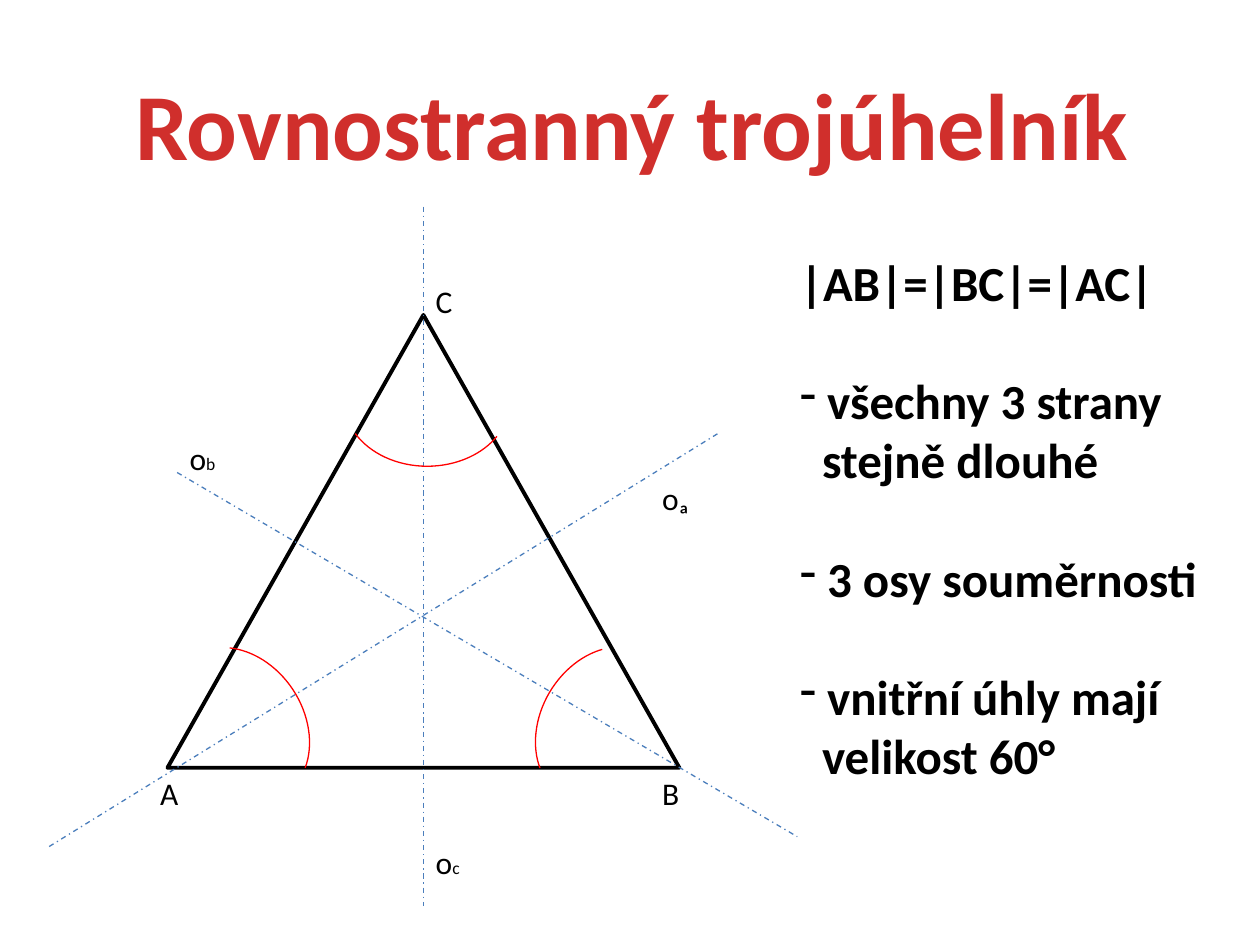
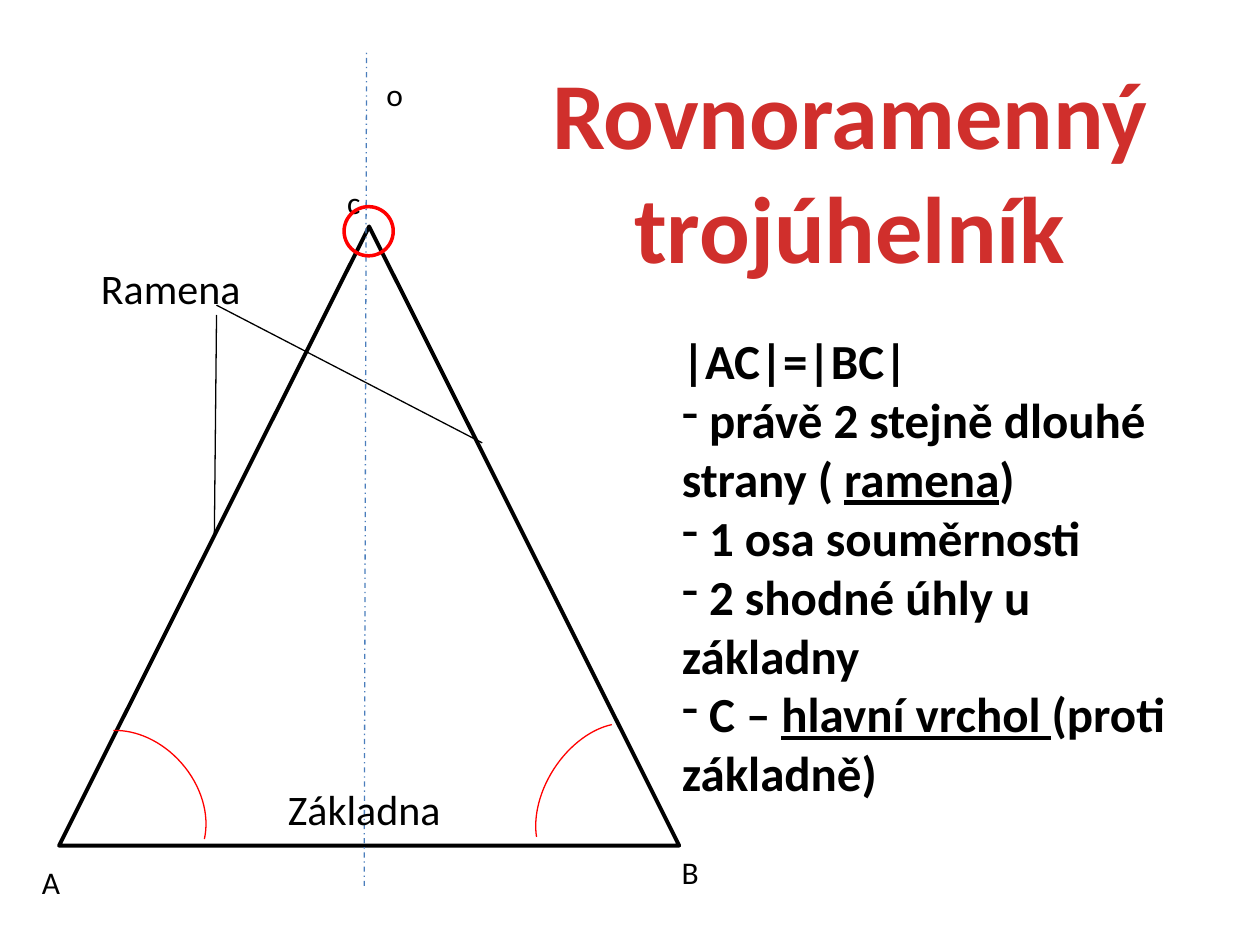
from dataclasses import dataclass

from lxml import etree
from pptx import Presentation
from pptx.dml import color
from pptx.enum import dml, shapes, text
from pptx.oxml import ns
from pptx.util import Pt


# Shared look
@dataclass(frozen=True)
class Theme:
    font: str = "Calibri"
    title_color: color.RGBColor = color.RGBColor(0xD0, 0x2F, 0x2C)
    ink: color.RGBColor = color.RGBColor(0, 0, 0)
    axis: color.RGBColor = color.RGBColor(0x4B, 0x7E, 0xBC)
    angle: color.RGBColor = color.RGBColor(0xFF, 0, 0)
    title_size: float = 54
    fact_size: float = 28
    word_size: float = 24
    label_size: float = 18
    subscript_size: float = 10
    thin: float = 0.75
    outline: float = 2.25
    ring: float = 2


THEME = Theme()
LINE_HEIGHT = 1.22
BLANK_LINE = THEME.fact_size * LINE_HEIGHT
CONTINUATION_INDENT = 12.66


# Repeated elements, lengths in points
@dataclass(frozen=True)
class Box:
    left: float
    top: float
    width: float
    height: float

    def lengths(self) -> tuple:
        return Pt(self.left), Pt(self.top), Pt(self.width), Pt(self.height)


@dataclass(frozen=True)
class Label:
    words: str
    left: float
    top: float
    width: float
    subscript: str = ""
    size: float = THEME.label_size


@dataclass(frozen=True)
class Line:
    start: tuple[float, float]
    end: tuple[float, float]


@dataclass(frozen=True)
class AngleArc:
    box: Box
    rotation: float
    start: float = 207
    end: float = 335.47


@dataclass(frozen=True)
class Fact:
    """Every second phrase is underlined."""
    phrases: tuple[str, ...]
    bullet: bool = True
    indent: float = 0
    space_before: float = 0


# Drawing functions
def set_font(font, size: float, ink: color.RGBColor, bold: bool = False) -> None:
    font.name = THEME.font
    font.size = Pt(size)
    font.bold = bold
    font.color.rgb = ink


def add_text_frame(slide, box: Box, wrap: bool):
    frame = slide.shapes.add_textbox(*box.lengths()).text_frame
    frame.word_wrap = wrap
    frame.auto_size = text.MSO_AUTO_SIZE.SHAPE_TO_FIT_TEXT
    return frame


def add_title(slide, words: str, box: Box, wrap: bool) -> None:
    paragraph = add_text_frame(slide, box, wrap).paragraphs[0]
    paragraph.text = words
    paragraph.alignment = text.PP_ALIGN.CENTER
    set_font(paragraph.font, THEME.title_size, THEME.title_color, bold=True)


def add_label(slide, label: Label) -> None:
    height = round(label.size * LINE_HEIGHT + 7.2, 2)
    box = Box(label.left, label.top, label.width, height)
    paragraph = add_text_frame(slide, box, wrap=False).paragraphs[0]
    set_font(paragraph.font, label.size, THEME.ink)
    paragraph.add_run().text = label.words
    if label.subscript:
        run = paragraph.add_run()
        run.text = label.subscript
        run.font.size = Pt(THEME.subscript_size)


def add_facts(slide, facts: list[Fact], box: Box) -> None:
    frame = add_text_frame(slide, box, wrap=True)
    for index, fact in enumerate(facts):
        paragraph = frame.add_paragraph() if index else frame.paragraphs[0]
        set_font(paragraph.font, THEME.fact_size, THEME.ink, bold=True)
        paragraph.space_before = Pt(fact.space_before)
        for position, words in enumerate(fact.phrases):
            run = paragraph.add_run()
            run.text = words
            if position % 2:
                run.font.underline = True
        properties = paragraph._p.get_or_add_pPr()
        properties.set("marL", str(Pt(fact.indent)))
        properties.set("indent", "0")
        if fact.bullet:
            bullet = etree.Element(ns.qn("a:buChar"), char="-")
            properties.find(ns.qn("a:defRPr")).addprevious(bullet)


def add_line(slide, line: Line, ink: color.RGBColor, dashed: bool = False) -> None:
    connector = slide.shapes.add_connector(
        shapes.MSO_CONNECTOR.STRAIGHT,
        *(Pt(value) for value in line.start + line.end))
    connector.line.color.rgb = ink
    connector.line.width = Pt(THEME.thin)
    if dashed:
        connector.line.dash_style = dml.MSO_LINE.DASH_DOT
    etree.SubElement(connector._element.spPr, ns.qn("a:effectLst"))


def add_outline(slide, kind, box: Box, ink: color.RGBColor, width: float):
    shape = slide.shapes.add_shape(kind, *box.lengths())
    shape.shadow.inherit = False
    shape.fill.background()
    shape.line.color.rgb = ink
    shape.line.width = Pt(width)
    return shape


def add_triangle(slide, box: Box) -> None:
    add_outline(slide, shapes.MSO_SHAPE.ISOSCELES_TRIANGLE, box,
                THEME.ink, THEME.outline)


def add_arc(slide, arc: AngleArc) -> None:
    shape = add_outline(slide, shapes.MSO_SHAPE.ARC, arc.box, THEME.angle, THEME.thin)
    # Angles are stored in 1/60000 degree, adjustments in 1/100000
    shape.adjustments[0] = arc.start * 0.6
    shape.adjustments[1] = arc.end * 0.6
    shape.rotation = arc.rotation


# Slide 1: equilateral triangle
def build_equilateral(slide) -> None:
    add_title(slide, "Rovnostranný trojúhelník", Box(67.5, 34, 587.5, 72.7), wrap=False)
    add_triangle(slide, Box(95.7, 180, 292.5, 258.75))
    for axis in (
        Line((241.9, 118.1), (241.9, 517.5)),
        Line((28.1, 483.75), (410.6, 247.5)),
        Line((101.25, 270), (455.6, 478.1)),
    ):
        add_line(slide, axis, THEME.axis, dashed=True)
    for label in (
        Label("oₐ", 371.25, 270, 30.2),
        Label("o", 241.9, 478.1, 28.1, subscript="c"),
        Label("o", 101.25, 247.5, 29.5, subscript="b"),
        Label("A", 84.4, 438.75, 25.2),
        Label("B", 371.25, 438.75, 24.5),
        Label("C", 241.9, 157.5, 24.5),
    ):
        add_label(slide, label)
    add_facts(slide, [
        Fact(("|AB|=|BC|=|AC|",), bullet=False),
        Fact((" všechny 3 strany",), space_before=BLANK_LINE),
        Fact(("stejně dlouhé",), bullet=False, indent=CONTINUATION_INDENT),
        Fact((" 3 osy souměrnosti",), space_before=BLANK_LINE),
        Fact((" vnitřní úhly mají",), space_before=BLANK_LINE),
        Fact(("velikost 60°",), bullet=False, indent=CONTINUATION_INDENT),
    ], Box(450, 140.6, 241.9, 312.5))
    for arc in (
        AngleArc(Box(88.6, 377.3, 95, 74.9), 56.7),
        AngleArc(Box(298.8, 377.3, 95, 74.9), 300.4, end=326.85),
        AngleArc(Box(196.6, 191.5, 95, 74.9), 180),
    ):
        add_arc(slide, arc)


# Slide 2: isosceles triangle
def build_isosceles(slide) -> None:
    add_triangle(slide, Box(33.75, 129.4, 354.4, 353.8))
    add_line(slide, Line((208.1, 506.25), (209.5, 28.1)), THEME.axis, dashed=True)
    add_title(slide, "Rovnoramenný trojúhelník", Box(286.6, 28.1, 398.2, 138.2), wrap=True)
    for label in (
        Label("A", 16.9, 489.4, 25.2),
        Label("B", 382.5, 483.75, 24.5),
        Label("c", 191.25, 101.25, 22.3),
        Label("o", 213.75, 39.4, 24.5),
        Label("Ramena", 50.6, 146.25, 95, size=THEME.word_size),
        Label("Základna", 157.5, 444.4, 103, size=THEME.word_size),
    ):
        add_label(slide, label)
    for pointer in (
        Line((123.75, 174.4), (275.6, 253.1)),
        Line((123.75, 180), (122.5, 306)),
    ):
        add_line(slide, pointer, THEME.ink)
    add_facts(slide, [
        Fact(("|AC|=|BC|",), bullet=False),
        Fact((" právě 2 stejně dlouhé strany ( ", "ramena", ")")),
        Fact((" 1 osa souměrnosti",)),
        Fact((" 2 shodné úhly u základny",)),
        Fact((" C – ", "hlavní vrchol ", "(proti základně)")),
    ], Box(382.5, 185.6, 303.8, 278.6))
    for arc in (
        AngleArc(Box(28.1, 423.4, 95, 74.9), 48.9),
        AngleArc(Box(295.9, 424.8, 95, 64.1), 302.8),
    ):
        add_arc(slide, arc)
    add_outline(slide, shapes.MSO_SHAPE.OVAL, Box(196.6, 118.1, 28.1, 28.1),
                THEME.angle, THEME.ring)


def main() -> None:
    presentation = Presentation()
    presentation.slide_width = Pt(720)
    presentation.slide_height = Pt(540)
    blank = presentation.slide_layouts[6]
    for build in (build_equilateral, build_isosceles):
        build(presentation.slides.add_slide(blank))
    presentation.save("out.pptx")


if __name__ == "__main__":
    main()
